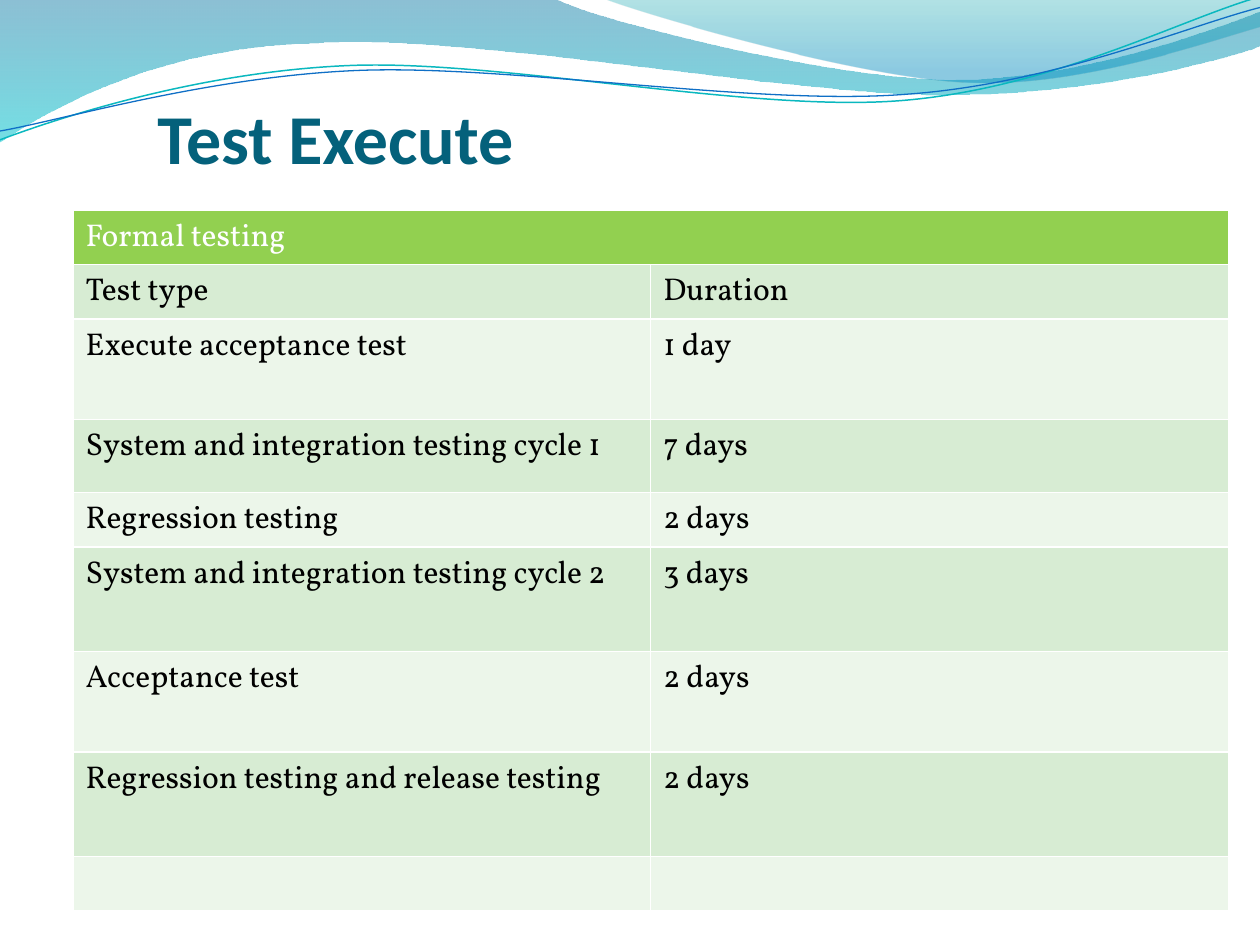
import math
from dataclasses import dataclass
from typing import Optional

import pptx
import pptx.dml.color
import pptx.enum.text
import pptx.oxml
import pptx.oxml.ns
import pptx.util

# The slide is a grid of 10 columns by 7.5 rows, one inch each
COLUMNS, ROWS = 10, 7.5
WHITE, BLACK = "FFFFFF", "000000"
HEADER_GREEN, DARK_BAND, LIGHT_BAND = "92D050", "D7ECD3", "ECF6EA"
TITLE_TEAL = "04617B"
LINE_TILT = 357.3
Point = tuple[float, float]


@dataclass
class Stop:
    position: float
    color: str
    opacity: int


@dataclass
class Wave:
    """Segments of one point are lines, segments of three are Bezier curves."""
    start: Point
    segments: list[list[Point]]
    stops: Optional[list[Stop]] = None
    line: Optional[tuple[str, float]] = None
    center: Optional[Point] = None


@dataclass
class TestRow:
    height: float
    name: str = ""
    duration: str = ""


WAVES = [
    Wave((0, 0), [[(4.4, -0.01)],
                  [(4.76, 0.17), (6.64, 0.63), (7.58, 0.63)],
                  [(8.53, 0.63), (9.58, 0.26), (10, 0.09)],
                  [(10.01, 0.36)],
                  [(9.83, 0.44), (8.7, 0.76), (7.46, 0.75)],
                  [(6.22, 0.75), (3.82, 0.28), (2.57, 0.34)],
                  [(1.29, 0.36), (0.46, 0.83), (-0.01, 1.13)]],
         stops=[Stop(0, "0074A1", 45), Stop(1, "00C6CF", 55)]),
    Wave((4.79, -0.01), [[(5.09, 0.11), (6.82, 0.62), (7.69, 0.65)],
                         [(8.56, 0.69), (9.61, 0.32), (10, 0.21)],
                         [(10, 0)]],
         stops=[Stop(0, "00A1A9", 30), Stop(0.8, "008BBF", 45)]),
    Wave((0, 1.11), [[(0.48, 0.93), (1.58, 0.57), (2.77, 0.52)],
                     [(3.95, 0.47), (5.93, 0.89), (7.13, 0.8)],
                     [(8.33, 0.71), (9.38, 0.15), (9.98, -0.02)]],
         line=("0AB8BF", 0.85), center=(4.99, 0.57)),
    Wave((0, 1.04), [[(0.47, 0.96), (1.64, 0.61), (2.83, 0.56)],
                     [(4.03, 0.51), (5.97, 0.84), (7.17, 0.75)],
                     [(8.36, 0.67), (9.41, 0.21), (10, 0.06)]],
         line=("0F6FC6", 0.75), center=(5, 0.59)),
]

TEST_ROWS = [
    TestRow(0.43, "Formal testing"),
    TestRow(0.43, "Test type", "Duration"),
    TestRow(0.8, "Execute acceptance test", "1 day"),
    TestRow(0.58, "System and integration testing cycle 1", "7 days"),
    TestRow(0.43, "Regression testing", "2 days"),
    TestRow(0.83, "System and integration testing cycle 2", "3 days"),
    TestRow(0.8, "Acceptance test", "2 days"),
    TestRow(0.83, "Regression testing and release testing", "2 days"),
    TestRow(0.43),
]


def grid(cells: float) -> int:
    return pptx.util.Inches(cells)


def rgb(color: str) -> pptx.dml.color.RGBColor:
    return pptx.dml.color.RGBColor.from_string(color)


def style_runs(frame, font: str, size: float, color: str, bold: bool = False) -> None:
    for para in frame.paragraphs:
        for span in para.runs:
            span.font.name = font
            span.font.size = pptx.util.Pt(size)
            span.font.color.rgb = rgb(color)
            span.font.bold = bold


def level(point: Point, center: Optional[Point]) -> Point:
    """Undo the tilt of a line, so that the shape's rotation can apply it."""
    if center is None:
        return point
    angle = math.radians(360 - LINE_TILT)
    x, y = point[0] - center[0], point[1] - center[1]
    return (center[0] + x * math.cos(angle) - y * math.sin(angle),
            center[1] + x * math.sin(angle) + y * math.cos(angle))


def bend(shape, segments: list[list[Point]]) -> None:
    """Join each run of three straight steps into one Bezier curve."""
    steps = iter(list(shape._element.iter(pptx.oxml.ns.qn("a:lnTo"))))
    for segment in segments:
        group = [next(steps) for _ in segment]
        if len(group) == 3:
            curve = group[0].makeelement(pptx.oxml.ns.qn("a:cubicBezTo"), {})
            group[0].addprevious(curve)
            for step in group:
                curve.append(step[0])
                step.getparent().remove(step)


def fill_gradient(shape, stops: list[Stop]) -> None:
    shape.fill.gradient()
    shape.fill.gradient_angle = 270
    for target, stop in zip(shape.fill.gradient_stops, stops):
        target.position = stop.position
        target.color.rgb = rgb(stop.color)
    colors = shape.fill._xPr.iter(pptx.oxml.ns.qn("a:srgbClr"))
    for color, stop in zip(colors, stops):
        color.append(color.makeelement(pptx.oxml.ns.qn("a:alpha"),
                                       {"val": str(stop.opacity * 1000)}))


def draw_wave(page, wave: Wave) -> None:
    corners = [wave.start] + [point for segment in wave.segments for point in segment]
    points = [tuple(grid(value) for value in level(point, wave.center))
              for point in corners]
    builder = page.shapes.build_freeform(*points[0], scale=1.0)
    builder.add_line_segments(points[1:], close=wave.stops is not None)
    shape = builder.convert_to_shape()
    bend(shape, wave.segments)
    shape.shadow.inherit = False
    if wave.center:
        shape.rotation = LINE_TILT
    if wave.stops:
        fill_gradient(shape, wave.stops)
    else:
        shape.fill.background()
    if wave.line:
        color, width = wave.line
        shape.line.color.rgb = rgb(color)
        shape.line.width = pptx.util.Pt(width)
    else:
        shape.line.fill.background()


def draw_title(page, text: str) -> None:
    box = page.shapes.add_textbox(grid(1.25), grid(0.17), grid(9), grid(1.25))
    frame = box.text_frame
    frame.word_wrap = True
    frame.vertical_anchor = pptx.enum.text.MSO_ANCHOR.BOTTOM
    frame.margin_left = frame.margin_right = frame.margin_bottom = 0
    frame.margin_top = grid(0.05)
    frame.text = text
    style_runs(frame, "Calibri", 40, TITLE_TEAL, bold=True)


def add_borders(cell) -> None:
    properties = cell._tc.get_or_add_tcPr()
    for side in "LRTB":
        properties.append(pptx.oxml.parse_xml(
            f'<a:ln{side} {pptx.oxml.ns.nsdecls("a")} w="{pptx.util.Pt(1)}">'
            f'<a:solidFill><a:srgbClr val="{WHITE}"/></a:solidFill></a:ln{side}>'))


def draw_table(page, rows: list[TestRow]) -> None:
    height = sum(row.height for row in rows)
    frame = page.shapes.add_table(len(rows), 2, grid(0.58), grid(1.67),
                                  grid(9.17), grid(height))
    table = frame.table
    for index, row in enumerate(rows):
        header = index == 0
        band = HEADER_GREEN if header else DARK_BAND if index % 2 else LIGHT_BAND
        table.rows[index].height = grid(row.height)
        for column, text in enumerate((row.name, row.duration)):
            cell = table.cell(index, column)
            add_borders(cell)
            cell.fill.solid()
            cell.fill.fore_color.rgb = rgb(band)
            if text:
                cell.text_frame.text = text
                style_runs(cell.text_frame, "Vollkorn", 18, WHITE if header else BLACK)
    table.cell(0, 0).merge(table.cell(0, 1))


def main() -> None:
    deck = pptx.Presentation()
    deck.slide_width, deck.slide_height = grid(COLUMNS), grid(ROWS)
    page = deck.slides.add_slide(deck.slide_layouts[6])
    # Decorative waves along the top edge
    for wave in WAVES:
        draw_wave(page, wave)
    # Title and schedule
    draw_title(page, "Test Execute")
    draw_table(page, TEST_ROWS)
    deck.save("out.pptx")


if __name__ == "__main__":
    main()
